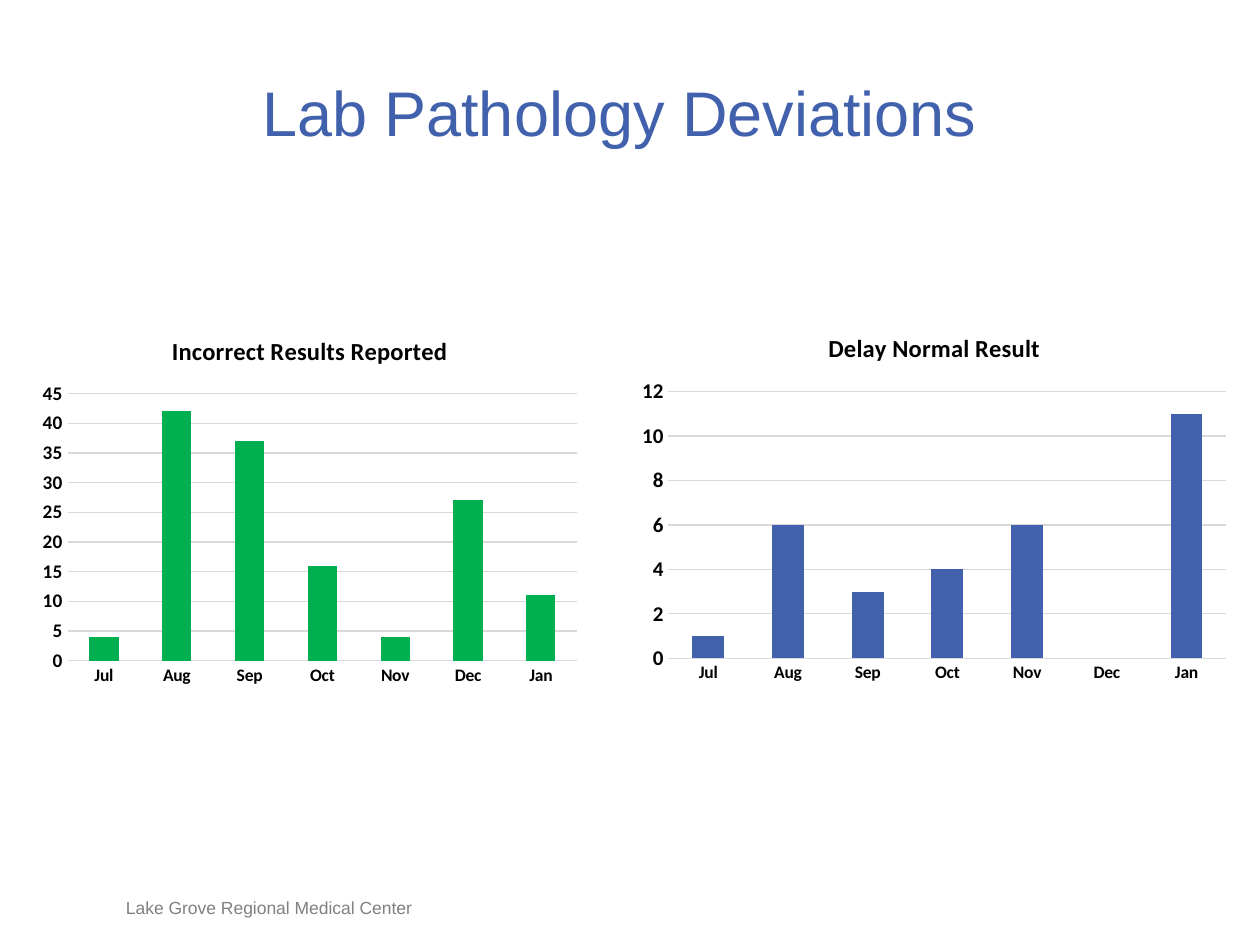
import pptx
import pptx.chart.data
import pptx.dml.color
import pptx.enum.chart
import pptx.enum.text
import pptx.util
from pptx.util import Inches

BLUE, GREEN, GRAY, GRID, BLACK = "4261AD", "00B050", "808080", "D9D9D9", "000000"
MONTHS = ["Jul", "Aug", "Sep", "Oct", "Nov", "Dec", "Jan"]


def rgb(value):
    return pptx.dml.color.RGBColor.from_string(value)


def set_font(font, size, color, name="Calibri", bold=False):
    values = {"size": pptx.util.Pt(size), "name": name, "bold": bold}
    for key, value in values.items():
        setattr(font, key, value)
    font.color.rgb = rgb(color)


def set_line(line, color, width=0.75):
    line.color.rgb = rgb(color)
    line.width = pptx.util.Pt(width)


def write_text(sp, box, text, size, color, align, anchor):
    for key, value in zip(("left", "top", "width", "height"), box):
        setattr(sp, key, Inches(value))
    tf = sp.text_frame
    values = {"word_wrap": True, "vertical_anchor": anchor, "margin_left": 0,
              "margin_top": 0, "margin_right": 0, "margin_bottom": 0}
    for key, value in values.items():
        setattr(tf, key, value)
    p = tf.paragraphs[0]
    p.alignment = align
    r = p.add_run()
    r.text = text
    set_font(r.font, size, color, "Arial")


def add_column_chart(s, box, title, values, color, value_size):
    data = pptx.chart.data.CategoryChartData()
    data.categories = MONTHS
    data.add_series(title, values)
    chart = s.shapes.add_chart(pptx.enum.chart.XL_CHART_TYPE.COLUMN_CLUSTERED,
                               *map(Inches, box), data).chart
    set_font(chart.font, 10, BLACK)
    chart.has_legend = False

    # Chart title
    chart.has_title = True
    r = chart.chart_title.text_frame.paragraphs[0].add_run()
    r.text = title
    set_font(r.font, 14, BLACK, bold=True)
    chart.chart_title.include_in_layout = False

    # Columns
    plot = chart.plots[0]
    plot.gap_width = 150
    plot.vary_by_categories = False
    fill = plot.series[0].format.fill
    fill.solid()
    fill.fore_color.rgb = rgb(color)

    # Axes and gridlines
    for axis, size in ((chart.category_axis, 10), (chart.value_axis, value_size)):
        axis.major_tick_mark = pptx.enum.chart.XL_TICK_MARK.NONE
        axis.minor_tick_mark = pptx.enum.chart.XL_TICK_MARK.NONE
        set_font(axis.tick_labels.font, size, BLACK, bold=True)
    set_line(chart.category_axis.format.line, GRID)
    chart.value_axis.format.line.fill.background()
    set_line(chart.value_axis.major_gridlines.format.line, GRID)


def main():
    prs = pptx.Presentation()
    prs.slide_width, prs.slide_height = Inches(10), Inches(7.5)
    s = prs.slides.add_slide(prs.slide_layouts[5])
    align, anchor = pptx.enum.text.PP_ALIGN, pptx.enum.text.MSO_ANCHOR

    # Title
    write_text(s.shapes.title, (0.5, 0.58, 8.83, 0.61), "Lab Pathology Deviations",
               36, BLUE, align.CENTER, anchor.MIDDLE)

    # Monthly deviation charts
    add_column_chart(s, (0.25, 2.5, 4.42, 3), "Incorrect Results Reported",
                     [4, 42, 37, 16, 4, 27, 11], GREEN, 11)
    add_column_chart(s, (5, 2.48, 4.83, 3), "Delay Normal Result",
                     [1, 6, 3, 4, 6, None, 11], BLUE, 12)

    # Footer
    footer = s.shapes.add_textbox(0, 0, 0, 0)
    write_text(footer, (1, 7.12, 3.17, 0.17), "Lake Grove Regional Medical Center",
               10, GRAY, align.LEFT, anchor.BOTTOM)

    prs.save("out.pptx")


if __name__ == "__main__":
    main()
